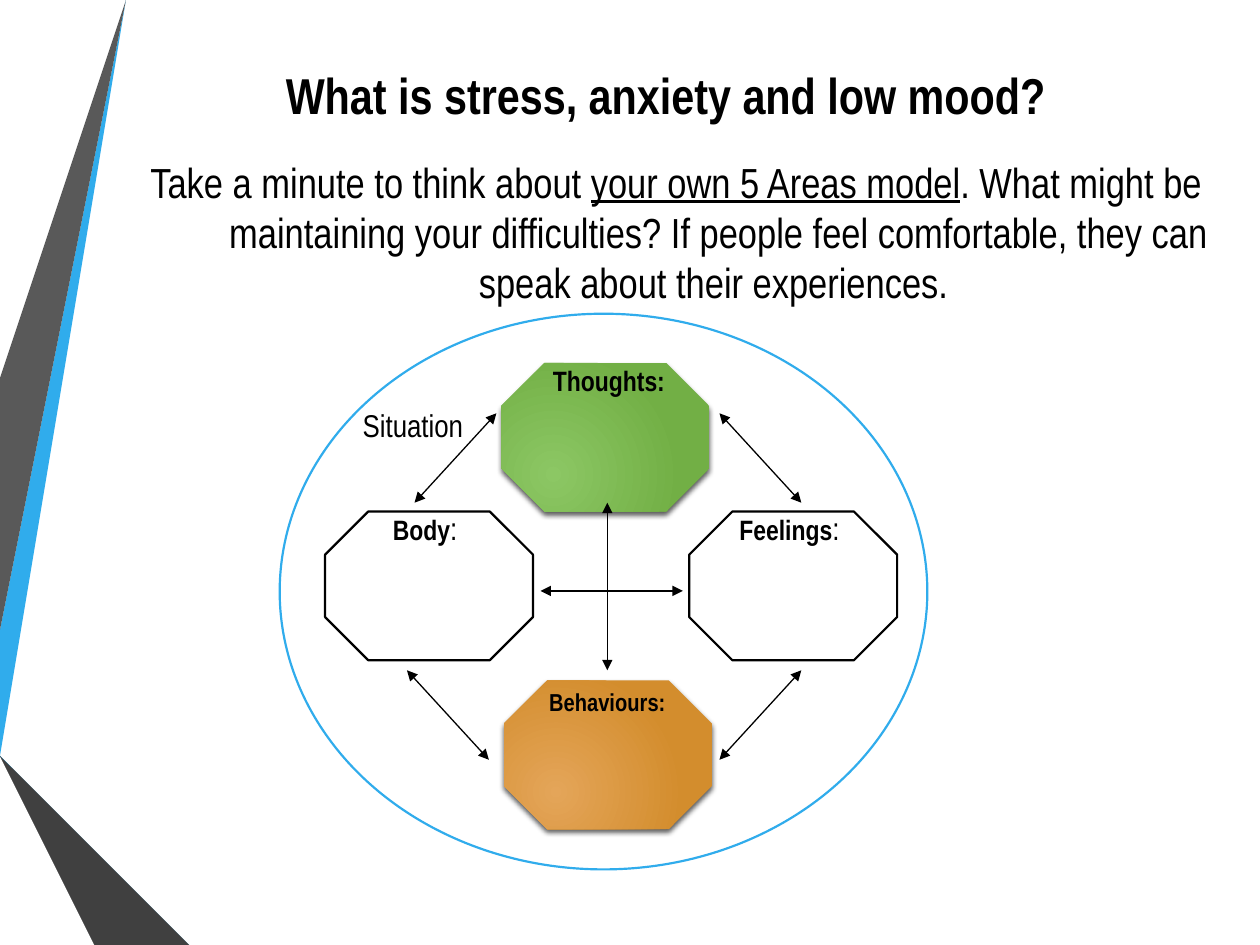
from pptx import Presentation
from pptx import util as u
from pptx.dml.color import RGBColor
from pptx.enum import shapes, text
from pptx.oxml import parse_xml
from pptx.oxml.ns import nsdecls, qn

FONT = "Arial Narrow"
BLACK, WHITE, BLUE = "000000", "FFFFFF", "30ACEC"
BOX_W, BOX_H = 1.65, 1.18
W, H = 10, 7.5

# Side ribbons: colour and outline points in inches
RIBBONS = [
    (BLUE, [(0, 5.44), (0, 5.75), (0.22, 5.79), (1.17, 0), (0.89, 0)]),
    ("595959", [(0.83, 0), (0.55, 0), (0, 3.36), (0, 5.06)]),
    ("262626", [(0, 6.19), (0, 6.21), (0.93, H), (0.99, H)]),
    ("0C5A82", [(0, 5.79), (0, 5.8), (1.56, H), (1.63, H)]),
    ("1287C3", [(0, 5.79), (1.63, H), (2.33, H), (0.22, 5.79), (0, 5.75)]),
    ("404040", [(0, 6.19), (0.99, H), (1.51, H), (0, 5.86)]),
]

# Areas of the model: left, top, gradient (or None for an outlined box)
AREAS = [
    (3.98, 2.88, ("8CC764", "72AF45")),
    (5.47, 4.06, None),
    (2.58, 4.06, None),
    (4, 5.4, ("E4A559", "D38D2D")),
]

# Links between areas: x1, y1, x2, y2
LINKS = [
    (4.82, 3.99, 4.82, 5.32),
    (4.29, 4.69, 5.42, 4.69),
    (3.94, 3.28, 3.29, 3.99),
    (6.36, 5.32, 5.71, 6.03),
    (6.36, 3.99, 5.71, 3.28),
    (3.88, 6.03, 3.23, 5.32),
]

# Labels: left, top, height, runs of (text, size, bold)
LABELS = [
    (4.29, 2.84, 0.37, [("Thoughts:", 16, True)]),
    (2.78, 3.17, 0.4, [("Situation", 18, False)]),
    (5.77, 3.99, 0.4, [("Feelings", 16, True), (":", 18, False)]),
    (3.02, 3.99, 0.4, [("Body", 16, True), (":", 18, False)]),
    (4.26, 5.4, 0.34, [("Behaviours:", 14, True)]),
]


def rgb(value):
    return RGBColor.from_string(value)


def inches(*values):
    return [u.Inches(v) for v in values]


def paint(sp, fill, line=None):
    sp.shadow.inherit = False
    sp.fill.solid()
    sp.fill.fore_color.rgb = rgb(fill)
    if line:
        sp.line.color.rgb = rgb(line)
        sp.line.width = u.Pt(1.25)
    else:
        sp.line.fill.background()


def set_font(font, size, bold=False):
    font.name, font.size, font.bold = FONT, u.Pt(size), bold
    font.color.rgb = rgb(BLACK)


def add_ribbon(s, color, points):
    builder = s.shapes.build_freeform(*points[0], scale=u.Inches(1))
    builder.add_line_segments(points[1:], close=True)
    paint(builder.convert_to_shape(), color)


def add_glow(sp, colors):
    """Radial gradient lit from the lower left, with a soft shadow below."""
    sp.fill.gradient()
    for stop, color in zip(sp.fill.gradient_stops, colors):
        stop.color.rgb = rgb(color)
    grad = sp._element.spPr.find(qn("a:gradFill"))
    grad.replace(grad.find(qn("a:lin")), parse_xml(
        f'<a:path {nsdecls("a")} path="circle"><a:fillToRect l="50000" '
        't="100000" r="100000" b="50000"/></a:path>'))
    sp._element.spPr.find(qn("a:effectLst")).append(parse_xml(
        f'<a:outerShdw {nsdecls("a")} blurRad="{u.Pt(3)}" dist="{u.Pt(2)}" '
        'dir="5400000" rotWithShape="0"><a:srgbClr val="000000">'
        '<a:alpha val="64000"/></a:srgbClr></a:outerShdw>'))


def add_area(s, left, top, colors):
    sp = s.shapes.add_shape(shapes.MSO_SHAPE.OCTAGON,
                            *inches(left, top, BOX_W, BOX_H))
    sp.adjustments[0] = 0.29
    paint(sp, WHITE, None if colors else BLACK)
    if colors:
        add_glow(sp, colors)


def add_link(s, ends):
    link = s.shapes.add_connector(shapes.MSO_CONNECTOR.STRAIGHT, *inches(*ends))
    link.line.color.rgb = rgb(BLACK)
    link.line.width = u.Pt(0.75)
    ln = link.line._get_or_add_ln()
    for end in ("headEnd", "tailEnd"):
        ln.append(parse_xml(f'<a:{end} {nsdecls("a")} type="triangle"/>'))
    link._element.spPr.append(parse_xml(f'<a:effectLst {nsdecls("a")}/>'))


def add_textbox(s, *box):
    tf = s.shapes.add_textbox(*inches(*box)).text_frame
    tf.word_wrap = True
    return tf.paragraphs[0]


def add_label(s, left, top, height, runs):
    p = add_textbox(s, left, top, 1.18, height)
    for words, size, bold in runs:
        r = p.add_run()
        r.text = words
        set_font(r.font, size, bold)


def add_title(s, words):
    title = s.shapes.title
    title.left, title.top, title.width, title.height = inches(1.07, 0.5, 8.43, 0.5)
    tf = title.text_frame
    tf.text = words
    tf.auto_size = text.MSO_AUTO_SIZE.NONE
    tf.vertical_anchor = text.MSO_ANCHOR.MIDDLE
    p = tf.paragraphs[0]
    p.alignment = text.PP_ALIGN.CENTER
    set_font(p.font, 28.8, True)


def add_prompt(s):
    p = add_textbox(s, 1, 1.19, 8.73, 5.72)
    p.alignment = text.PP_ALIGN.CENTER
    set_font(p.font, 24)
    # Hanging indent
    pPr = p._p.get_or_add_pPr()
    pPr.set("marL", str(u.Inches(0.67)))
    pPr.set("indent", str(u.Inches(-0.67)))
    for words, underline in [
        ("Take a minute to think about ", False),
        ("your own 5 Areas model", True),
        (". What might be maintaining your difficulties? If people feel "
         "comfortable, they can speak about their experiences. ", False),
    ]:
        r = p.add_run()
        r.text = words
        set_font(r.font, 24)
        r.font.underline = underline


def main():
    prs = Presentation()
    prs.slide_width, prs.slide_height = inches(W, H)
    s = prs.slides.add_slide(prs.slide_layouts[5])

    for color, points in RIBBONS:
        add_ribbon(s, color, points)
    add_title(s, "What is stress, anxiety and low mood?")
    add_prompt(s)

    # Five areas model inside its situation circle
    circle = s.shapes.add_shape(shapes.MSO_SHAPE.OVAL,
                                *inches(2.22, 2.49, 5.14, 4.41))
    paint(circle, WHITE, BLUE)
    for area in AREAS:
        add_area(s, *area)
    for ends in LINKS:
        add_link(s, ends)
    for label in LABELS:
        add_label(s, *label)

    prs.save("out.pptx")


if __name__ == "__main__":
    main()
